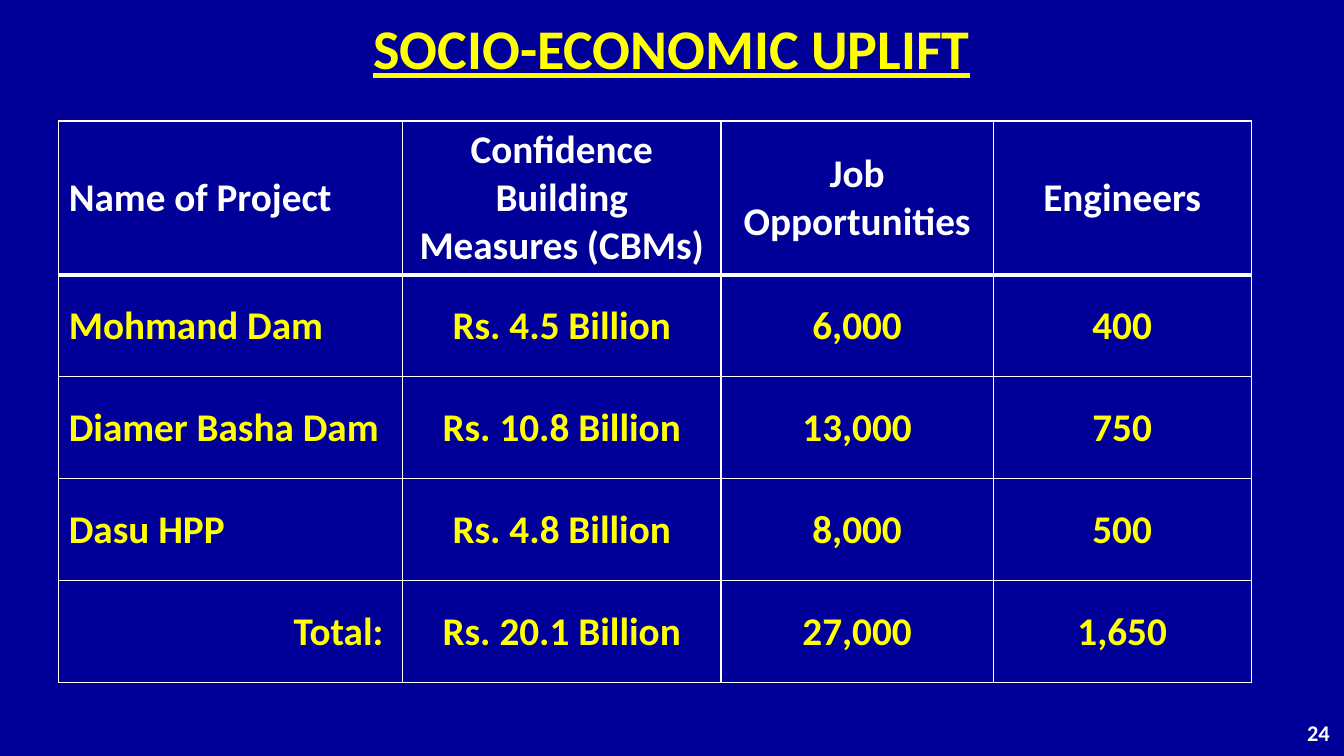
import pptx
import pptx.dml.color
import pptx.enum.text
import pptx.oxml
import pptx.oxml.ns
import pptx.util

Cm = pptx.util.Cm
Pt = pptx.util.Pt
RGB = pptx.dml.color.RGBColor.from_string
ALIGN = pptx.enum.text.PP_ALIGN
MIDDLE = pptx.enum.text.MSO_ANCHOR.MIDDLE

COLORS = {"navy": "000099", "yellow": "FFFF00", "white": "FFFFFF"}
FONT = "Calibri"
COLUMN_WIDTHS = [8.66, 8.03, 6.86, 6.5]
HEADER_HEIGHT, ROW_HEIGHT = 3.84, 2.57
ROWS = [
    ["Name of Project", "Confidence Building Measures (CBMs)", "Job Opportunities", "Engineers"],
    ["Mohmand Dam", "Rs. 4.5 Billion", "6,000", "400"],
    ["Diamer Basha Dam", "Rs. 10.8 Billion", "13,000", "750"],
    ["Dasu HPP", "Rs. 4.8 Billion", "8,000", "500"],
    ["Total: ", "Rs. 20.1 Billion", "27,000", "1,650"],
]


class Deck:
    def __init__(self, prs):
        self.s = prs.slides.add_slide(prs.slide_layouts[5])
        fill = self.s.background.fill
        fill.solid()
        fill.fore_color.rgb = RGB(COLORS["navy"])

    def add_text(self, tf, text, size, color, align):
        tf.word_wrap = True
        p = tf.paragraphs[0]
        p.alignment = align
        r = p.add_run()
        r.text = text
        r.font.name = FONT
        r.font.size = Pt(size)
        r.font.bold = True
        r.font.color.rgb = RGB(COLORS[color])
        return p

    def title(self, text, left, top, width, height):
        sp = self.s.shapes.title
        sp.left, sp.top, sp.width, sp.height = Cm(left), Cm(top), Cm(width), Cm(height)
        tf = sp.text_frame
        tf.vertical_anchor = MIDDLE
        p = self.add_text(tf, text, 40, "yellow", ALIGN.CENTER)
        p.line_spacing = 0.9
        p.runs[0].font.underline = True

    def page_number(self, text, left, top, width, height):
        sp = self.s.shapes.add_textbox(Cm(left), Cm(top), Cm(width), Cm(height))
        sp.text_frame.vertical_anchor = MIDDLE
        self.add_text(sp.text_frame, text, 16, "white", ALIGN.RIGHT)

    def borders(self, cell, **widths):
        tc_pr = cell._tc.get_or_add_tcPr()
        for i, side in enumerate("LRTB"):
            tc_pr.insert(i, pptx.oxml.parse_xml(
                f'<a:ln{side} {pptx.oxml.ns.nsdecls("a")} w="{Pt(widths.get(side, 1))}">'
                f'<a:solidFill><a:srgbClr val="{COLORS["white"]}"/></a:solidFill></a:ln{side}>'))

    def table(self, rows, left, top):
        height = HEADER_HEIGHT + ROW_HEIGHT * (len(rows) - 1)
        table = self.s.shapes.add_table(
            len(rows), len(COLUMN_WIDTHS), Cm(left), Cm(top),
            Cm(sum(COLUMN_WIDTHS)), Cm(height)).table
        table.horz_banding = False
        for column, width in zip(table.columns, COLUMN_WIDTHS):
            column.width = Cm(width)
        for i, values in enumerate(rows):
            table.rows[i].height = Cm(ROW_HEIGHT if i else HEADER_HEIGHT)
            first_align = ALIGN.RIGHT if i == len(rows) - 1 else ALIGN.LEFT
            for j, text in enumerate(values):
                cell = table.cell(i, j)
                cell.fill.background()
                cell.vertical_anchor = MIDDLE
                self.borders(cell, T=3 if i == 1 else 1, B=3 if i == 0 else 1)
                self.add_text(cell.text_frame, text, 28, "yellow" if i else "white",
                              ALIGN.CENTER if j else first_align)


def main():
    prs = pptx.Presentation()
    prs.slide_width, prs.slide_height = Cm(33.87), Cm(19.05)
    deck = Deck(prs)
    deck.title("SOCIO-ECONOMIC UPLIFT", 0.86, 0.05, 32.13, 2.51)
    deck.table(ROWS, 1.48, 3.05)
    deck.page_number("24", 26.14, 17.96, 7.62, 1.02)
    prs.save("out.pptx")


if __name__ == "__main__":
    main()
